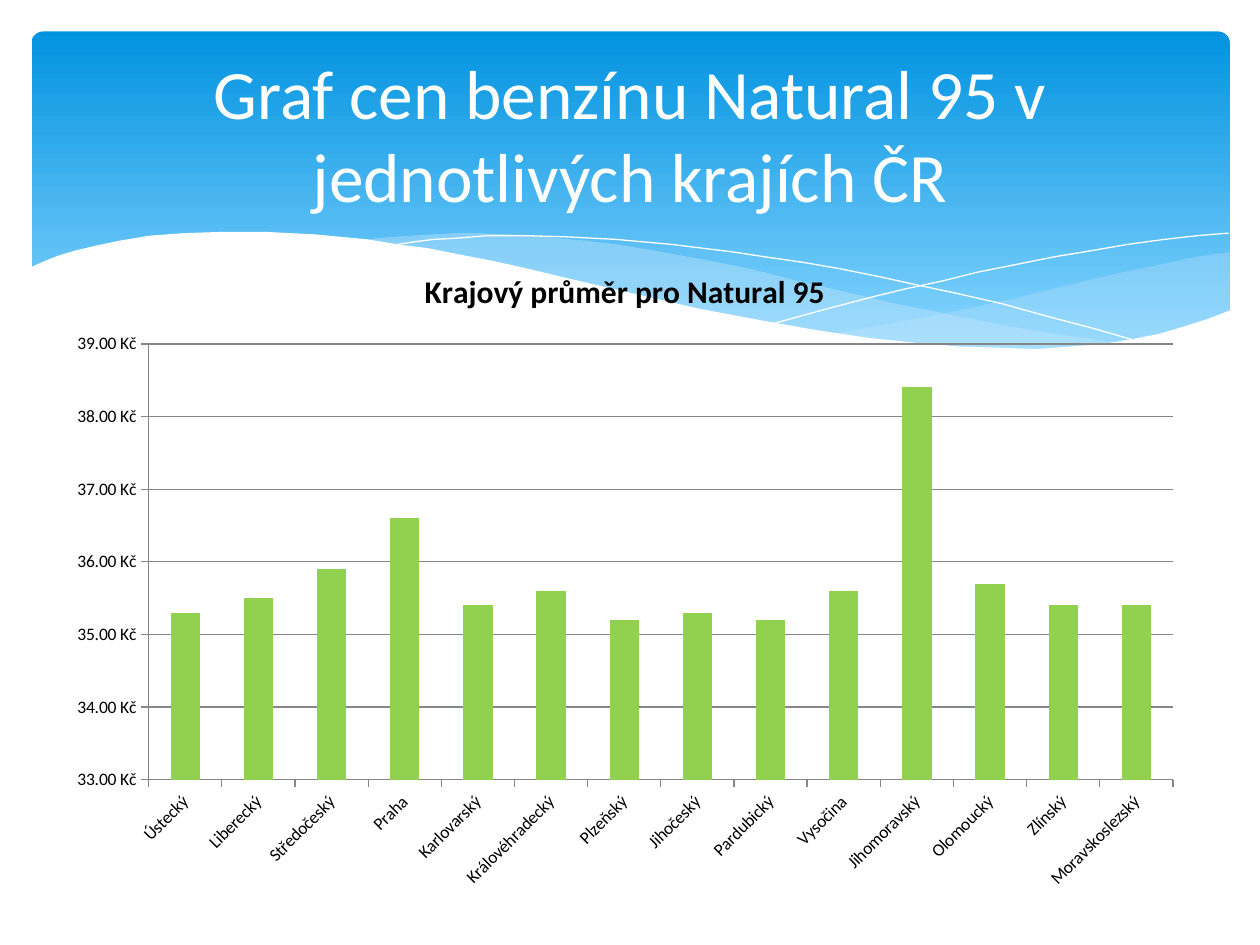
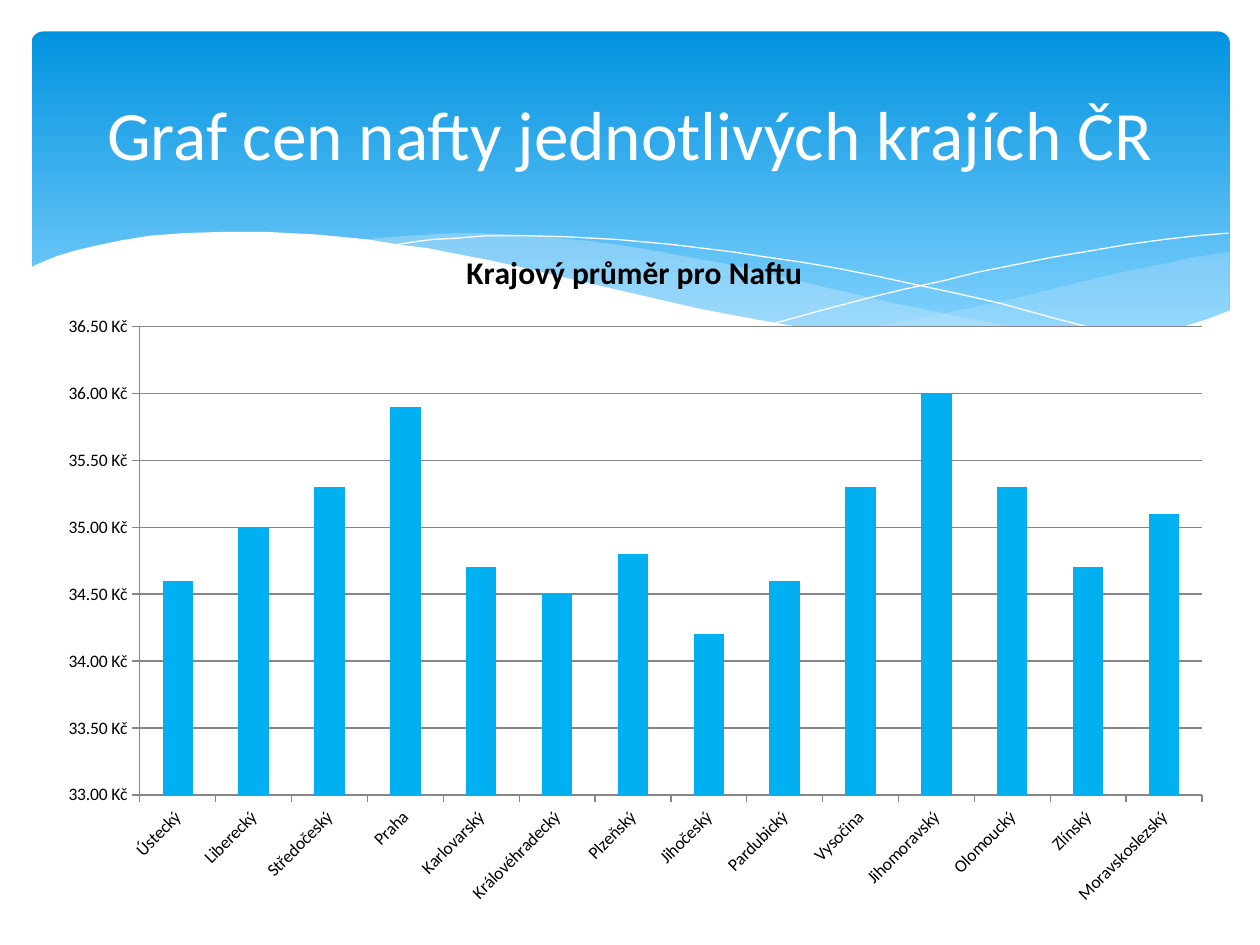
from dataclasses import dataclass

from lxml import etree
from pptx import Presentation
from pptx.chart.data import CategoryChartData
from pptx.dml.color import RGBColor
from pptx.enum.chart import XL_CHART_TYPE as ChartType, XL_TICK_MARK as TickMark
from pptx.enum.shapes import MSO_SHAPE as Shape
from pptx.enum.text import MSO_ANCHOR as Anchor, PP_ALIGN as Align
from pptx.oxml import parse_xml
from pptx.oxml.ns import nsdecls, qn
from pptx.util import Inches, Pt


@dataclass(frozen=True)
class Theme:
    font: str = "Calibri"
    title_size: float = 39.6
    chart_title_size: float = 18
    label_size: float = 10
    white: RGBColor = RGBColor.from_string("FFFFFF")
    black: RGBColor = RGBColor.from_string("000000")
    band_top: RGBColor = RGBColor.from_string("0293E0")
    band_bottom: RGBColor = RGBColor.from_string("83D3FE")
    wave: RGBColor = RGBColor.from_string("C6E7FC")
    grid: RGBColor = RGBColor.from_string("868686")
    petrol: RGBColor = RGBColor.from_string("92D050")
    diesel: RGBColor = RGBColor.from_string("00B0F0")


THEME = Theme()

# Outlines of the title band's lower edge, in inches
RIGHT_WAVE = [
    (9.76, 2), (9.48, 2.04), (9.21, 2.1), (8.91, 2.16), (8.61, 2.23), (8.05, 2.37),
    (7.53, 2.48), (7.06, 2.57), (6.61, 2.65), (6.91, 2.69), (7.19, 2.72), (7.45, 2.75),
    (7.69, 2.77), (8.03, 2.78), (8.35, 2.77), (8.63, 2.75), (8.89, 2.72), (9.13, 2.67),
    (9.35, 2.62), (9.49, 2.57), (9.63, 2.52), (9.76, 2.47),
]
MIDDLE_WAVE = [
    (8.93, 2.73), (8.66, 2.69), (8.37, 2.65), (8.07, 2.6), (7.75, 2.54), (7.41, 2.47),
    (7.06, 2.4), (6.68, 2.31), (6.29, 2.22), (5.98, 2.14), (5.69, 2.08), (5.41, 2.03),
    (5.14, 1.98), (4.89, 1.94), (4.65, 1.91), (4.42, 1.89), (4.2, 1.87), (3.99, 1.86),
    (3.8, 1.85), (3.61, 1.85), (3.28, 1.87), (2.99, 1.89), (2.86, 1.91), (3.23, 1.96),
    (3.62, 2.03), (4.04, 2.11), (4.49, 2.22), (4.91, 2.32), (5.3, 2.4), (5.66, 2.48),
    (6.01, 2.55), (6.34, 2.61), (6.65, 2.66), (6.95, 2.7), (7.22, 2.74), (7.48, 2.76),
    (7.73, 2.77), (7.96, 2.78), (8.28, 2.78), (8.57, 2.77), (8.76, 2.75),
]
FALLING_LINE = [
    (3.09, 1.95), (3.28, 1.92), (3.44, 1.9), (3.63, 1.89), (3.87, 1.87), (4.16, 1.87),
    (4.5, 1.88), (4.89, 1.9), (5.33, 1.94), (5.82, 2), (6.08, 2.04), (6.36, 2.08),
    (6.65, 2.13), (6.95, 2.19), (7.27, 2.26), (7.6, 2.33), (7.95, 2.41), (8.31, 2.51),
    (8.69, 2.61), (9.07, 2.72),
]
RISING_LINE = [
    (6.13, 2.57), (6.53, 2.46), (6.95, 2.35), (7.2, 2.29), (7.48, 2.23), (7.76, 2.16),
    (8.06, 2.1), (8.36, 2.04), (8.66, 1.99), (8.95, 1.94), (9.24, 1.9), (9.51, 1.87),
    (9.75, 1.85),
]
WHITE_WAVE = [
    (9.77, 2.46), (9.59, 2.53), (9.4, 2.59), (9.2, 2.65), (8.99, 2.69), (8.75, 2.73),
    (8.5, 2.75), (8.23, 2.77), (7.93, 2.76), (7.61, 2.75), (7.26, 2.72), (6.88, 2.68),
    (6.48, 2.62), (6.03, 2.54), (5.55, 2.45), (5.03, 2.33), (4.47, 2.2), (4.18, 2.13),
    (3.91, 2.07), (3.65, 2.02), (3.4, 1.97), (3.16, 1.94), (2.92, 1.9), (2.71, 1.88),
    (2.5, 1.86), (2.3, 1.85), (2.11, 1.84), (1.77, 1.84), (1.46, 1.85), (1.19, 1.87),
    (0.95, 1.91), (0.76, 1.95), (0.59, 1.99), (0.46, 2.03), (0.36, 2.07), (0.29, 2.1),
    (0.23, 2.13), (0.23, 3.29), (9.77, 3.29),
]
# Outline, fill colour or line colour, fill opacity in percent (None for a line)
BAND_EDGES = [
    (RIGHT_WAVE, THEME.wave, 29),
    (MIDDLE_WAVE, THEME.wave, 40),
    (FALLING_LINE, THEME.white, None),
    (RISING_LINE, THEME.white, None),
    (WHITE_WAVE, THEME.white, 100),
]

REGIONS = [
    "Ústecký", "Liberecký", "Středočeský", "Praha", "Karlovarský", "Královéhradecký",
    "Plzeňský", "Jihočeský", "Pardubický", "Vysočina", "Jihomoravský", "Olomoucký",
    "Zlínský", "Moravskoslezský",
]
# Frames are left, top, width and height in inches on the slide
FUELS = [
    dict(
        heading="Graf cen benzínu Natural 95 v jednotlivých krajích ČR",
        chart_title="Krajový průměr pro Natural 95",
        prices=[35.3, 35.5, 35.9, 36.6, 35.4, 35.6, 35.2,
                35.3, 35.2, 35.6, 38.4, 35.7, 35.4, 35.4],
        top_price=39, step=1, color=THEME.petrol, plot_fill=None,
        frame=(0.43, 1.94, 9.06, 5.22), plot_frame=(1.18, 2.73, 8.13, 3.46),
    ),
    dict(
        heading="Graf cen nafty jednotlivých krajích ČR",
        chart_title="Krajový průměr pro Naftu",
        prices=[34.6, 35.0, 35.3, 35.9, 34.7, 34.5, 34.8,
                34.2, 34.6, 35.3, 36.0, 35.3, 34.7, 35.1],
        top_price=36.5, step=0.5, color=THEME.diesel, plot_fill=THEME.white,
        frame=(0.35, 1.78, 9.37, 5.5), plot_frame=(1.11, 2.59, 8.43, 3.72),
    ),
]


def style_font(font, size, color, bold=False):
    font.name, font.size, font.bold = THEME.font, Pt(size), bold
    font.color.rgb = color


def add_title_band(slide):
    """Draw the gradient band with its wavy lower edge."""
    band = slide.shapes.add_shape(
        Shape.ROUNDED_RECTANGLE, Inches(0.25), Inches(0.25), Inches(9.51), Inches(2.7))
    band.adjustments[0] = 0.034
    band.shadow.inherit = False
    band.line.fill.background()
    band.fill.gradient()
    band.fill.gradient_angle = 270
    stops = [(0, THEME.band_top), (0.9, THEME.band_bottom)]
    for stop, (position, color) in zip(band.fill.gradient_stops, stops):
        stop.position = position
        stop.color.rgb = color

    for outline, color, opacity in BAND_EDGES:
        points = [(Inches(x), Inches(y)) for x, y in outline]
        builder = slide.shapes.build_freeform(*points[0])
        builder.add_line_segments(points[1:], close=opacity is not None)
        edge = builder.convert_to_shape()
        edge.shadow.inherit = False
        if opacity is None:
            edge.fill.background()
            edge.line.color.rgb = color
            edge.line.width = Pt(0)
            continue
        edge.line.fill.background()
        edge.fill.solid()
        edge.fill.fore_color.rgb = color
        if opacity < 100:
            fill_color = edge.element.spPr.find(f"{qn('a:solidFill')}/{qn('a:srgbClr')}")
            etree.SubElement(fill_color, qn("a:alpha"), val=str(opacity * 1000))


deck = Presentation()
deck.slide_width, deck.slide_height = Inches(10), Inches(7.5)

for fuel in FUELS:
    slide = deck.slides.add_slide(deck.slide_layouts[6])
    add_title_band(slide)

    box = slide.shapes.add_textbox(Inches(0.5), Inches(0.37), Inches(9), Inches(1.37))
    box.text_frame.word_wrap = True
    box.text_frame.vertical_anchor = Anchor.MIDDLE
    box.text_frame.text = fuel["heading"]
    para = box.text_frame.paragraphs[0]
    para.alignment = Align.CENTER
    style_font(para.runs[0].font, THEME.title_size, THEME.white)

    data = CategoryChartData()
    data.categories = REGIONS
    data.add_series(fuel["chart_title"], fuel["prices"])
    frame = [Inches(length) for length in fuel["frame"]]
    chart = slide.shapes.add_chart(ChartType.COLUMN_CLUSTERED, *frame, data).chart
    style_font(chart.font, THEME.label_size, THEME.black)
    chart.has_legend = False
    chart.has_title = True
    chart.chart_title.text_frame.text = fuel["chart_title"]
    chart.chart_title.include_in_layout = False
    title_span = chart.chart_title.text_frame.paragraphs[0].runs[0]
    style_font(title_span.font, THEME.chart_title_size, THEME.black, bold=True)

    plot = chart.plots[0]
    plot.gap_width = 150
    plot.vary_by_categories = False
    bars = plot.series[0]
    bars.format.fill.solid()
    bars.format.fill.fore_color.rgb = fuel["color"]

    price_axis, region_axis = chart.value_axis, chart.category_axis
    price_axis.minimum_scale, price_axis.maximum_scale = 33, fuel["top_price"]
    price_axis.major_unit = fuel["step"]
    price_axis.tick_labels.number_format = '#,##0.00\\ "Kč"'
    price_axis.tick_labels.number_format_is_linked = False
    price_axis.major_gridlines.format.line.color.rgb = THEME.grid
    for axis in (price_axis, region_axis):
        axis.major_tick_mark = TickMark.OUTSIDE
        axis.format.line.color.rgb = THEME.grid
        style_font(axis.tick_labels.font, THEME.label_size, THEME.black)
    label_body = region_axis._element.find(f"{qn('c:txPr')}/{qn('a:bodyPr')}")
    label_body.set("rot", "-2700000")

    # Fix the inner plot area as fractions of the chart frame
    left, top, width, height = fuel["frame"]
    plot_left, plot_top, plot_width, plot_height = fuel["plot_frame"]
    fractions = dict(x=(plot_left - left) / width, y=(plot_top - top) / height,
                     w=plot_width / width, h=plot_height / height)
    plot_area = chart._chartSpace.chart.plotArea
    for old_layout in plot_area.findall(qn("c:layout")):
        plot_area.remove(old_layout)
    layout = etree.Element(qn("c:layout"))
    manual = etree.SubElement(layout, qn("c:manualLayout"))
    settings = dict(layoutTarget="inner", xMode="edge", yMode="edge")
    settings.update({key: f"{value:.4f}" for key, value in fractions.items()})
    for key, value in settings.items():
        etree.SubElement(manual, qn(f"c:{key}"), val=value)
    plot_area.insert(0, layout)
    if fuel["plot_fill"] is not None:
        plot_area.append(parse_xml(
            f'<c:spPr {nsdecls("c", "a")}><a:solidFill>'
            f'<a:srgbClr val="{fuel["plot_fill"]}"/></a:solidFill></c:spPr>'))

deck.save("out.pptx")
